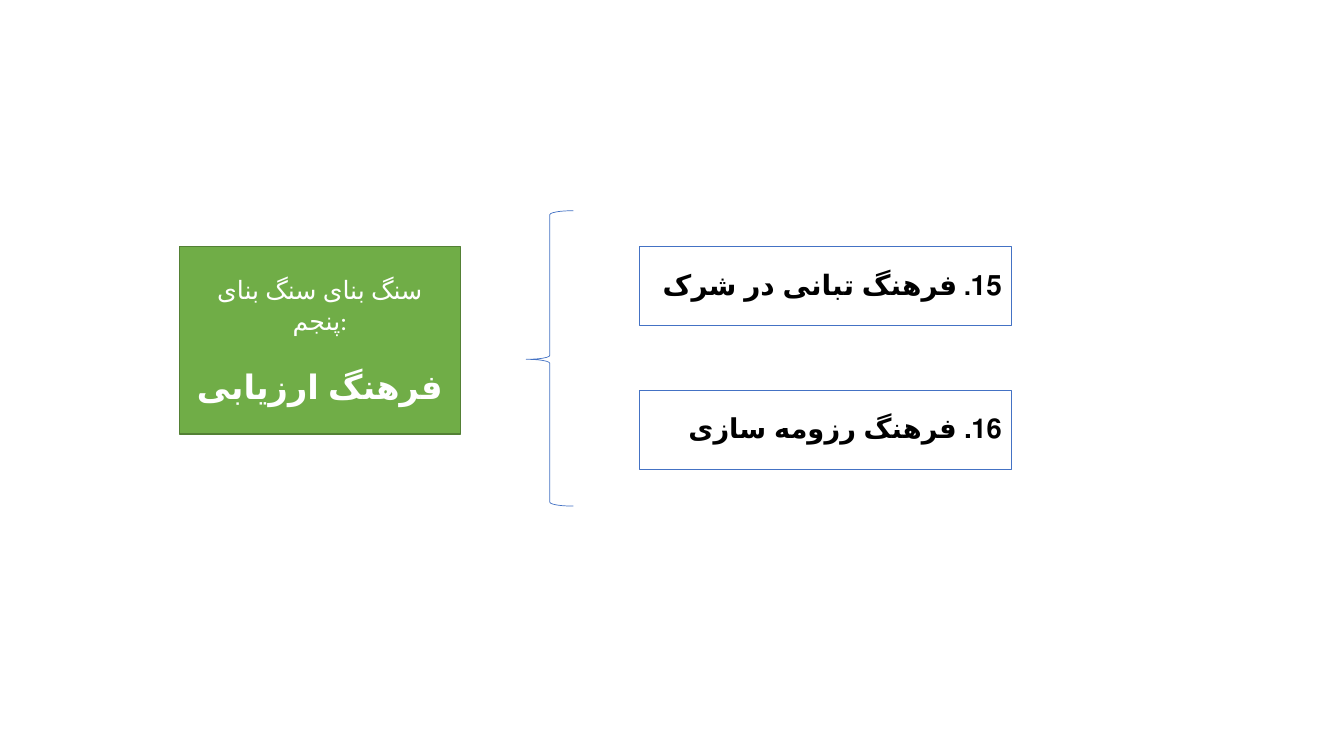
from pptx import Presentation
from pptx.dml.color import RGBColor
from pptx.enum import lang, shapes, text
from pptx.util import Pt

# Content: paragraphs are lists of (text, size) runs
CORNERSTONE = [("سنگ بنای سنگ بنای پنجم:", 18, False), ("فرهنگ ارزیابی", 24, True)]
CULTURES = [
    [("15", 20), (". ", 18), ("فرهنگ تبانی در شرک", 20)],
    [("16. فرهنگ رزومه سازی", 19.5)],
]
FONT = "Calibri"
WHITE, BLACK, BLUE = "FFFFFF", "000000", "4472C4"
GREEN, DARK_GREEN = "70AD47", "538035"

# Layout in points
TOP = 176.2
CULTURE_LEFT, CULTURE_W, CULTURE_H, CULTURE_STEP = 457, 265.7, 56.2, 102.9


def color(value):
    return RGBColor.from_string(value)


def add_shape(kind, left, top, width, height, fill, line, weight=1):
    sp = s.shapes.add_shape(kind, Pt(left), Pt(top), Pt(width), Pt(height))
    sp.shadow.inherit = False
    if fill:
        sp.fill.solid()
        sp.fill.fore_color.rgb = color(fill)
    else:
        sp.fill.background()
    sp.line.color.rgb = color(line)
    sp.line.width = Pt(weight)
    sp.text_frame.word_wrap = True
    sp.text_frame.vertical_anchor = text.MSO_ANCHOR.MIDDLE
    return sp


def add_run(p, words, size, bold, hue):
    r = p.add_run()
    r.text = words
    r.font.name, r.font.size, r.font.bold = FONT, Pt(size), bold
    r.font.language_id = lang.MSO_LANGUAGE_ID.FARSI
    r.font.color.rgb = color(hue)


prs = Presentation()
prs.slide_width, prs.slide_height = Pt(960), Pt(540)
s = prs.slides.add_slide(prs.slide_layouts[6])
RECT = shapes.MSO_SHAPE.RECTANGLE

# Numbered cultures, right to left
for i, runs in enumerate(CULTURES):
    sp = add_shape(RECT, CULTURE_LEFT, TOP + i * CULTURE_STEP,
                   CULTURE_W, CULTURE_H, WHITE, BLUE)
    p = sp.text_frame.paragraphs[0]
    p.alignment = text.PP_ALIGN.JUSTIFY
    p.line_spacing = 0.9
    p._p.get_or_add_pPr().set("rtl", "1")
    for words, size in runs:
        add_run(p, words, size, True, BLACK)

# Brace opening toward the cultures
brace = add_shape(shapes.MSO_SHAPE.RIGHT_BRACE, 375.8, 150.5, 33.8, 211,
                  None, BLUE, 0.5)
brace.rotation = 180
brace.adjustments[0], brace.adjustments[1] = 0.083, 0.497

# Cornerstone box
tf = add_shape(RECT, 128, TOP, 200.9, 133.9, GREEN, DARK_GREEN).text_frame
for i, (words, size, bold) in enumerate(CORNERSTONE):
    p = tf.add_paragraph() if i else tf.paragraphs[0]
    p.alignment = text.PP_ALIGN.CENTER
    p.space_before = Pt(22 * i)
    add_run(p, words, size, bold, WHITE)

prs.save("out.pptx")
